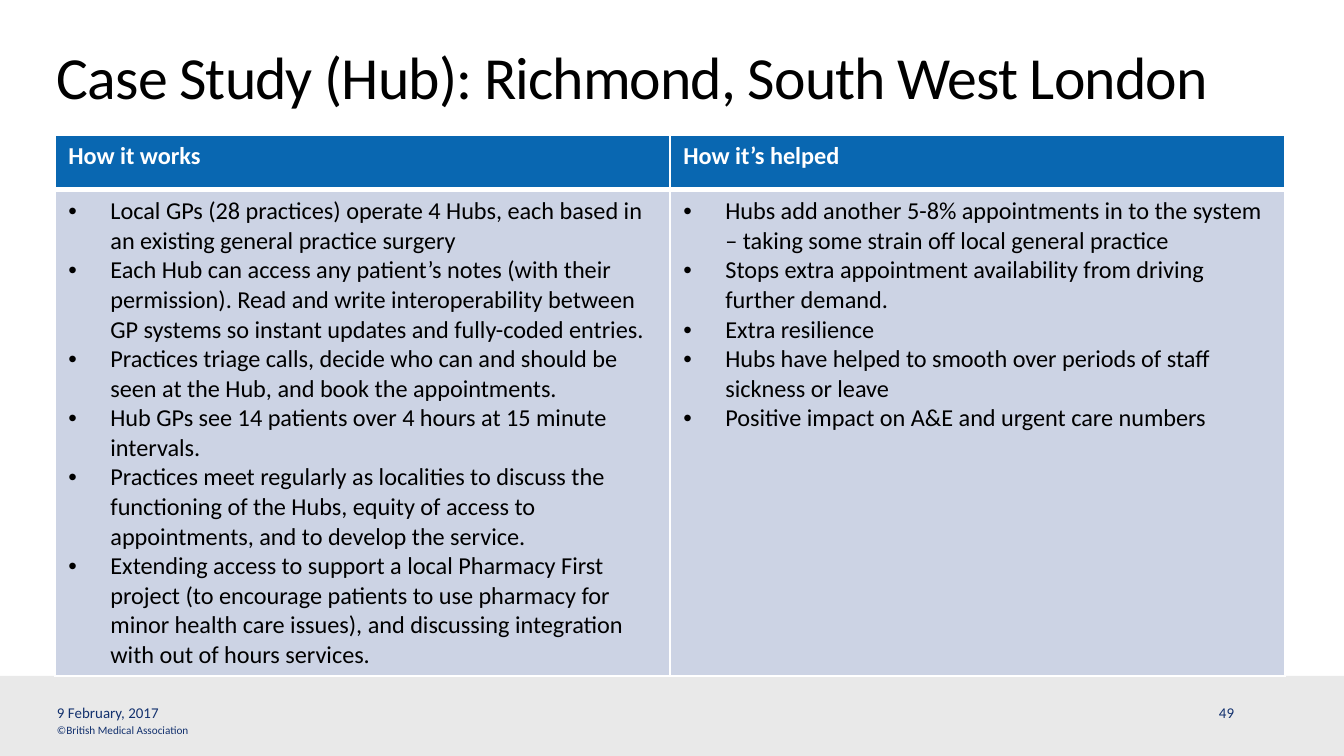
from pptx import Presentation
from pptx.dml.color import RGBColor
from pptx.enum.shapes import MSO_SHAPE
from pptx.enum.text import MSO_ANCHOR
from pptx.oxml import parse_xml
from pptx.oxml.ns import nsdecls
from pptx.util import Pt

NAVY, BLUE, PALE, GREY = "13316E", "0967B1", "CCD3E4", "E9E9E9"
WHITE, BLACK = "FFFFFF", "000000"

COLUMNS = [
    ("How it works", [
        "Local GPs (28 practices) operate 4 Hubs, each based in an existing general practice surgery",
        "Each Hub can access any patient’s notes (with their permission). Read and write "
        "interoperability between GP systems so instant updates and fully-coded entries.",
        "Practices triage calls, decide who can and should be seen at the Hub, and book the appointments.",
        "Hub GPs see 14 patients over 4 hours at 15 minute intervals.",
        "Practices meet regularly as localities to discuss the functioning of the Hubs, "
        "equity of access to appointments, and to develop the service.",
        "Extending access to support a local Pharmacy First project (to encourage patients to use "
        "pharmacy for minor health care issues), and discussing integration with out of hours services.",
    ]),
    ("How it’s helped", [
        "Hubs add another 5-8% appointments in to the system – taking some strain off local general practice",
        "Stops extra appointment availability from driving further demand.",
        "Extra resilience",
        "Hubs have helped to smooth over periods of staff sickness or leave",
        "Positive impact on A&E and urgent care numbers",
    ]),
]


def px(n):
    """Turn slide pixels into EMU."""
    return round(n * 9144000 / 1344)


def rgb(value):
    """Turn a hex string into a colour."""
    return RGBColor.from_string(value)


def write(tf, lines, size, color, bold=False, bullet=False, leading=None, spacing=None):
    """Write one paragraph per line into a text frame."""
    for i, line in enumerate(lines):
        p = tf.paragraphs[0] if i == 0 else tf.add_paragraph()
        if bullet:
            pPr = p._p.get_or_add_pPr()
            pPr.set("marL", str(px(42)))
            pPr.set("indent", str(-px(42)))
            pPr.append(parse_xml(f'<a:buFont {nsdecls("a")} typeface="Arial"/>'))
            pPr.append(parse_xml(f'<a:buChar {nsdecls("a")} char="•"/>'))
        if leading:
            p.line_spacing = Pt(leading)
        r = p.add_run()
        r.text = line
        r.font.name, r.font.size, r.font.bold = "Calibri", Pt(size), bold
        r.font.color.rgb = rgb(color)
        if spacing:
            r._r.get_or_add_rPr().set("spc", str(spacing))


def add_text(s, box, text, size, color, anchor=MSO_ANCHOR.MIDDLE, **fmt):
    """Add a text box without margins."""
    tf = s.shapes.add_textbox(*map(px, box)).text_frame
    tf.word_wrap, tf.vertical_anchor = True, anchor
    tf.margin_left = tf.margin_right = tf.margin_top = tf.margin_bottom = 0
    write(tf, [text], size, color, **fmt)


def style_cell(cell, fill, top, bottom):
    """Give a cell white borders and a solid fill."""
    tcPr = cell._tc.get_or_add_tcPr()
    for side, width in (("L", 1), ("R", 1), ("T", top), ("B", bottom)):
        tcPr.append(parse_xml(
            f'<a:ln{side} {nsdecls("a")} w="{Pt(width)}"><a:solidFill>'
            f'<a:srgbClr val="{WHITE}"/></a:solidFill></a:ln{side}>'))
    cell.fill.solid()
    cell.fill.fore_color.rgb = rgb(fill)


def add_study_table(s, box, header_height):
    """Add the table with one heading and one bullet list per column."""
    x, y, w, h = box
    table = s.shapes.add_table(2, len(COLUMNS), *map(px, box)).table
    table.rows[0].height = px(header_height)
    table.rows[1].height = px(h - header_height)
    for i, (heading, points) in enumerate(COLUMNS):
        table.columns[i].width = px(w / len(COLUMNS))
        head, body = table.cell(0, i), table.cell(1, i)
        style_cell(head, BLUE, 1, 3)
        style_cell(body, PALE, 3, 1)
        write(head.text_frame, [heading], 13, WHITE, bold=True)
        write(body.text_frame, points, 13, BLACK, bullet=True)


def add_footer(s, box):
    """Add the grey band with date, copyright line and page number."""
    x, y, w, h = box
    band = s.shapes.add_shape(MSO_SHAPE.RECTANGLE, *map(px, box))
    band.shadow.inherit = False
    band.fill.solid()
    band.fill.fore_color.rgb = rgb(GREY)
    band.line.fill.background()
    add_text(s, (x + 57, y + 47, 278, 14), "©British Medical Association", 6, NAVY)
    add_text(s, (x + 57, y + 28, 426, 17), "9 February, 2017", 8, NAVY)
    add_text(s, (x + 1219, y + 28, 38, 17), "49", 8, NAVY)


def main():
    """Build the case study slide."""
    prs = Presentation()
    prs.slide_width, prs.slide_height = px(1344), px(756)
    s = prs.slides.add_slide(prs.slide_layouts[6])
    add_footer(s, (0, 676, 1344, 80))
    add_text(s, (57, 48, 1163, 73), "Case Study (Hub): Richmond, South West London", 32, BLACK,
             anchor=MSO_ANCHOR.TOP, leading=34, spacing=-50)
    add_study_table(s, (55, 135, 1230, 541), 55)
    prs.save("out.pptx")


if __name__ == "__main__":
    main()
